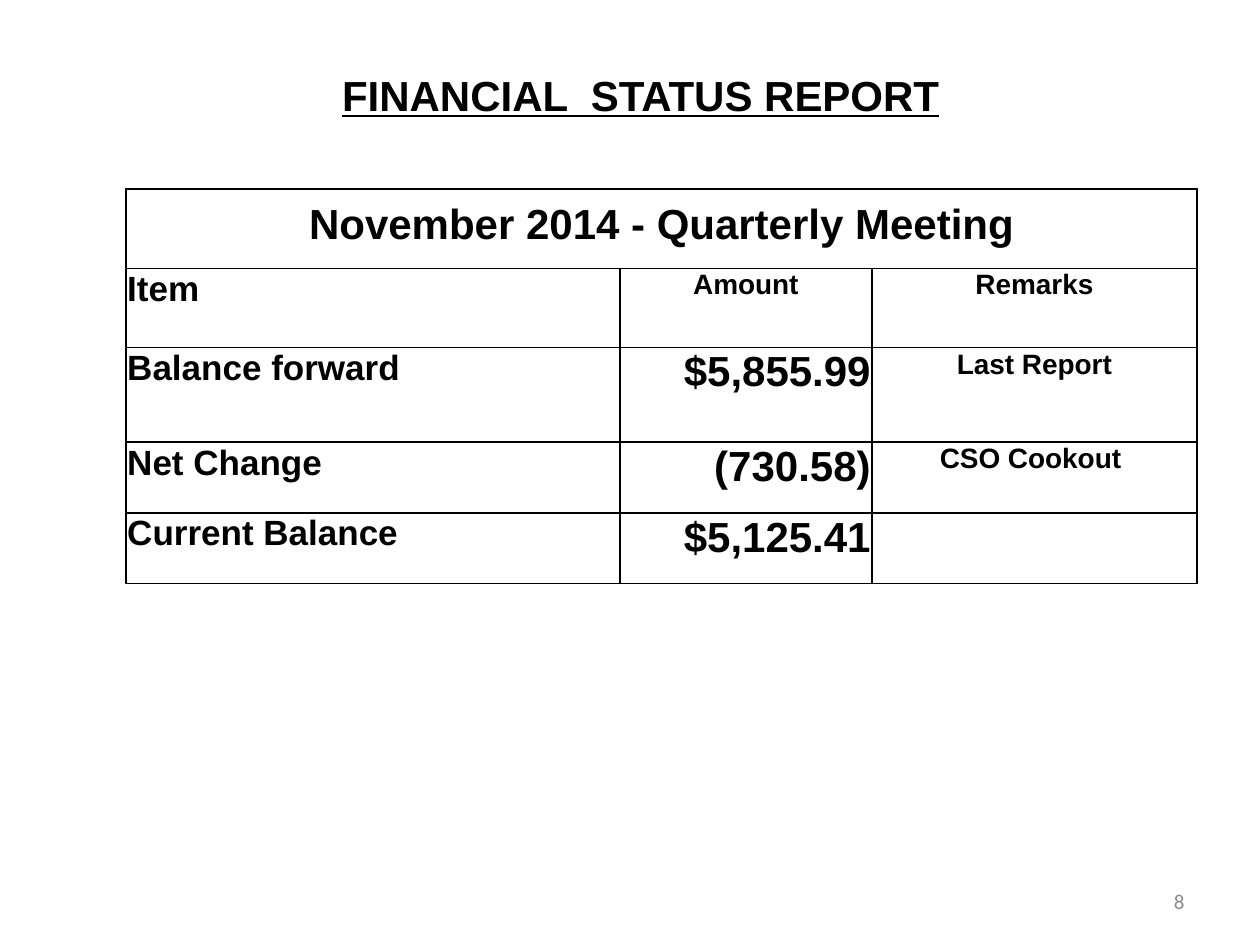
"""Build the financial status report slide."""
from lxml import etree
from pptx import Presentation
from pptx.dml.color import RGBColor
from pptx.enum.text import MSO_ANCHOR, PP_ALIGN
from pptx.oxml.ns import qn
from pptx.util import Inches, Pt

LEFT, CENTER, RIGHT = PP_ALIGN.LEFT, PP_ALIGN.CENTER, PP_ALIGN.RIGHT
TOP, MIDDLE, BOTTOM = MSO_ANCHOR.TOP, MSO_ANCHOR.MIDDLE, MSO_ANCHOR.BOTTOM

THEME = {
    "font": "Arial", "number_font": "Calibri",
    "ink": "000000", "paper": "FFFFFF", "muted": "8C8C8C",
    "large": 24, "item": 20, "small": 16, "number": 12, "border": 1,
}

TITLE = "FINANCIAL  STATUS REPORT"
PAGE = "8"
MEETING = "November 2014 - Quarterly Meeting"
HEADER = ("Item", "Amount", "Remarks")
ENTRIES = [
    ("Balance forward", "$5,855.99", "Last Report"),
    ("Net Change", "(730.58)", "CSO Cookout "),
    ("Current Balance", "$5,125.41", ""),
]
COL_WIDTHS = (3.92, 2, 2.58)
ROW_HEIGHTS = (0.63, 0.63, 0.75, 0.56, 0.56)
HEADER_STYLES = ((LEFT, "item"), (CENTER, "small"), (CENTER, "small"))
ENTRY_STYLES = ((LEFT, "item"), (RIGHT, "large"), (CENTER, "small"))


def write(tf, text, size, align, color="ink", font="font", bold=True, underline=False):
    tf.text = text
    p = tf.paragraphs[0]
    p.alignment = align
    for r in p.runs:
        r.font.name = THEME[font]
        r.font.size = Pt(THEME[size])
        r.font.bold = bold
        r.font.underline = underline
        r.font.color.rgb = RGBColor.from_string(THEME[color])


def add_label(slide, box, anchor, *args, **style):
    sp = slide.shapes.add_textbox(*map(Inches, box))
    tf = sp.text_frame
    tf.word_wrap = True
    tf.vertical_anchor = anchor
    write(tf, *args, **style)


def style_cell(cell, anchor=TOP, bottom=0):
    cell.margin_left = cell.margin_right = cell.margin_top = Inches(0.01)
    cell.margin_bottom = Inches(bottom)
    cell.vertical_anchor = anchor
    tc_pr = cell._tc.get_or_add_tcPr()
    for side in ("a:lnL", "a:lnR", "a:lnT", "a:lnB"):
        ln = etree.SubElement(tc_pr, qn(side), w=str(Pt(THEME["border"])))
        fill = etree.SubElement(ln, qn("a:solidFill"))
        etree.SubElement(fill, qn("a:srgbClr"), val=THEME["ink"])
    cell.fill.solid()
    cell.fill.fore_color.rgb = RGBColor.from_string(THEME["paper"])


def add_report(slide, left, top):
    size = (sum(COL_WIDTHS), sum(ROW_HEIGHTS))
    frame = slide.shapes.add_table(
        len(ROW_HEIGHTS), len(COL_WIDTHS), *map(Inches, (left, top, *size)))
    table = frame.table
    table.first_row = table.horz_banding = False
    for col, width in zip(table.columns, COL_WIDTHS):
        col.width = Inches(width)
    for row, height in zip(table.rows, ROW_HEIGHTS):
        row.height = Inches(height)

    for cell in table.rows[0].cells:
        style_cell(cell, BOTTOM, 0.16)
    banner = table.cell(0, 0)
    banner.merge(table.cell(0, len(COL_WIDTHS) - 1))
    write(banner.text_frame, MEETING, "large", CENTER)

    for i, values in enumerate([HEADER, *ENTRIES], start=1):
        styles = HEADER_STYLES if i == 1 else ENTRY_STYLES
        for j, (text, (align, font_size)) in enumerate(zip(values, styles)):
            cell = table.cell(i, j)
            style_cell(cell)
            write(cell.text_frame, text, font_size, align)


def main():
    prs = Presentation()
    prs.slide_width, prs.slide_height = Inches(10), Inches(7.5)
    slide = prs.slides.add_slide(prs.slide_layouts[6])
    add_label(slide, (7.17, 6.95, 2.33, 0.4), MIDDLE, PAGE, "number", RIGHT,
              color="muted", font="number_font", bold=False)
    add_report(slide, 1, 1.5)
    add_label(slide, (2.25, 0.5, 5.67, 0.5), TOP, TITLE, "large", CENTER,
              underline=True)
    prs.save("out.pptx")


if __name__ == "__main__":
    main()
